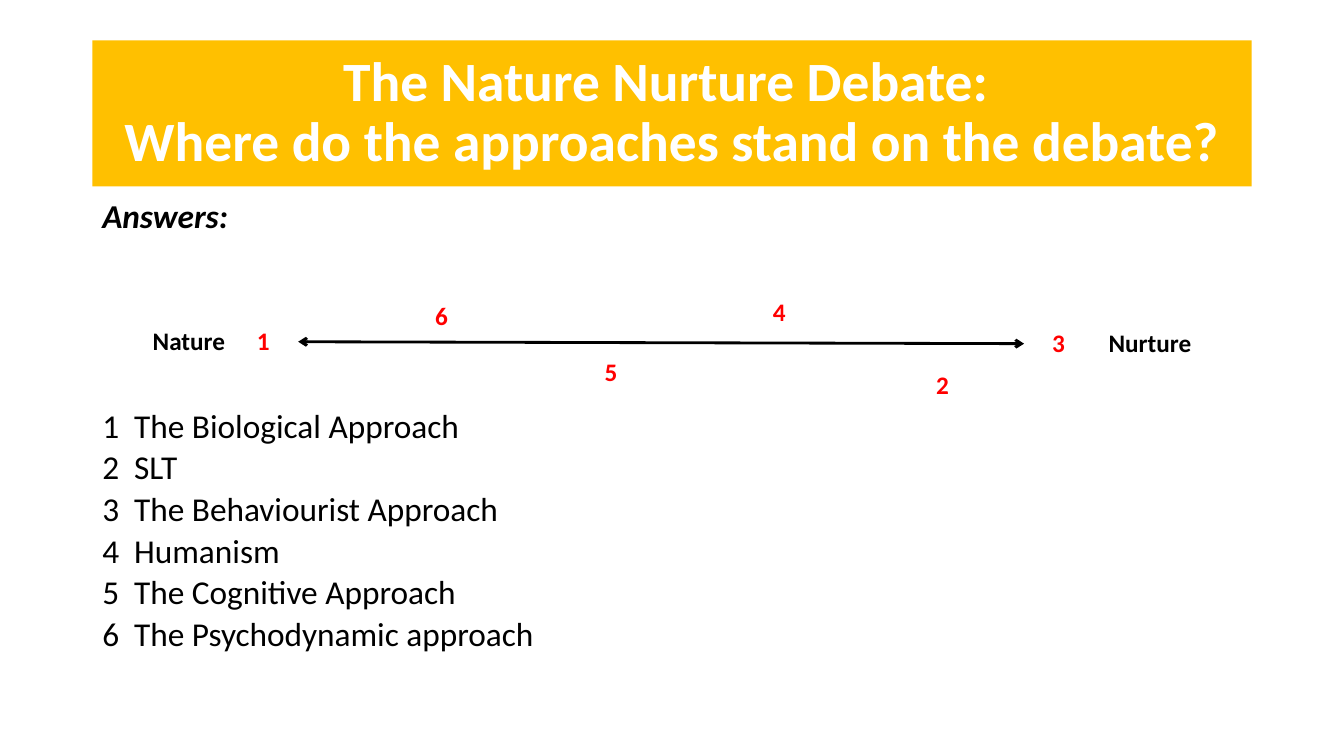
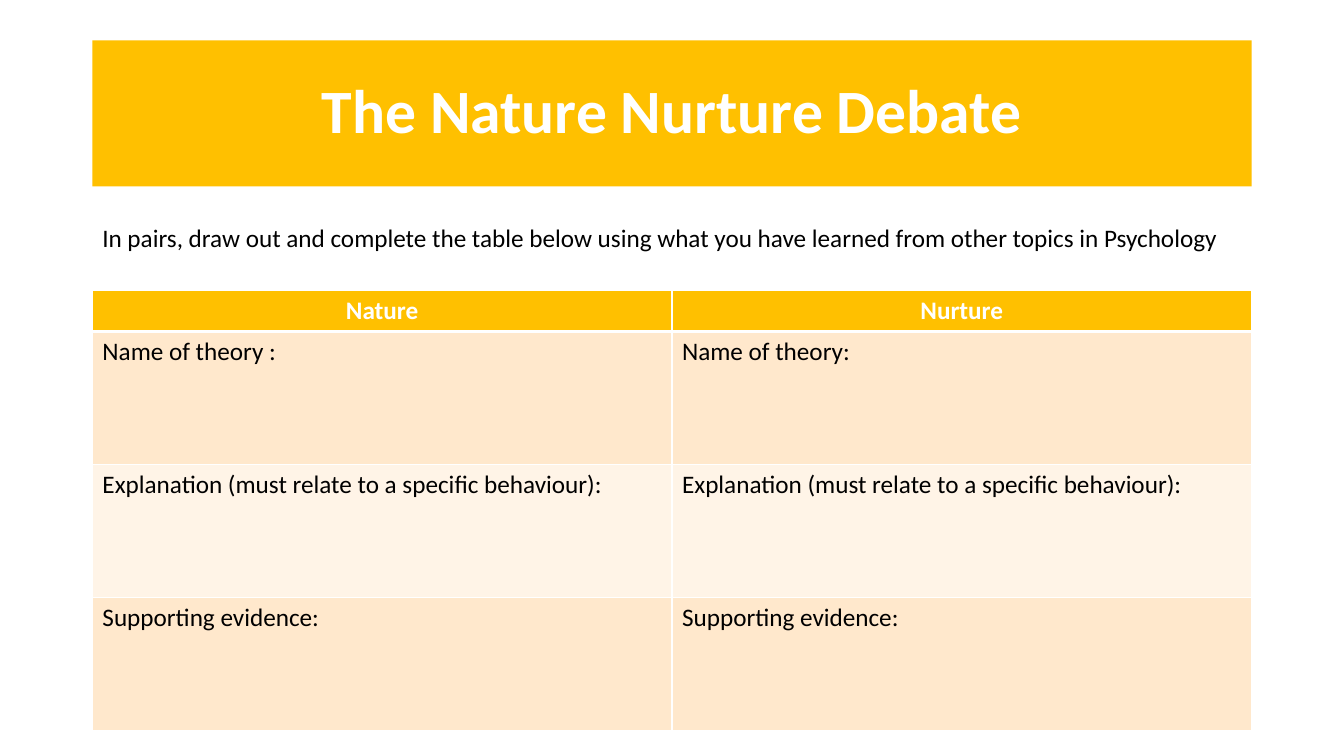
from dataclasses import dataclass

from lxml.etree import SubElement
from pptx import Presentation
from pptx.dml.color import RGBColor
from pptx.enum.shapes import MSO_CONNECTOR
from pptx.enum.text import MSO_ANCHOR, MSO_AUTO_SIZE, PP_ALIGN
from pptx.oxml.ns import qn
from pptx.util import Pt


@dataclass(frozen=True)
class Theme:
    font: str = "Calibri"
    accent: str = "FFC000"
    band_dark: str = "FFE8CC"
    band_light: str = "FFF4E7"
    ink: str = "000000"
    paper: str = "FFFFFF"
    marker: str = "FF0000"
    title_size: float = 44
    long_title_size: float = 39.6
    answer_size: float = 23.8
    body_size: float = 18


@dataclass(frozen=True)
class Box:
    left: float
    top: float
    width: float
    height: float

    def place(self):
        return Pt(self.left), Pt(self.top), Pt(self.width), Pt(self.height)

    def inner(self, left, top, width, height):
        return Box(self.left + left, self.top + top, width, height)


THEME = Theme()
TITLE_BAND = Box(66, 28.8, 828, 104.4)
ANSWERS = Box(66, 144, 828, 342.7)
SCALE = Box(102, 208, 758, 82)
INSTRUCTION = Box(66, 155.5, 828, 29)
WORKSHEET = Box(66, 207.5, 828, 314.2)

APPROACHES = [
    "The Biological Approach",
    "SLT",
    "The Behaviourist Approach",
    "Humanism",
    "The Cognitive Approach",
    "The Psychodynamic approach",
]
POLES = [("Nature", 0, 21), ("Nurture", 682.8, 22.4)]
STANDPOINTS = [(74.4, 21), (559.7, 52.6), (642.5, 22.4), (443, 0), (322.8, 43.3), (201.8, 3)]
WORKSHEET_ROWS = [
    ("Nature", "Nurture"),
    ("Name of theory :", "Name of theory:"),
    ("Explanation (must relate to a specific behaviour):",) * 2,
    ("Supporting evidence:",) * 2,
]


def color(value):
    return RGBColor.from_string(value)


def style(paragraph, size, ink=THEME.ink, bold=False, italic=False):
    font = paragraph.font
    font.name, font.size = THEME.font, Pt(size)
    font.bold, font.italic = bold, italic
    font.color.rgb = color(ink)


def add_title(slide, box, wording, size):
    title = slide.shapes.title
    title.left, title.top, title.width, title.height = box.place()
    title.fill.solid()
    title.fill.fore_color.rgb = color(THEME.accent)
    frame = title.text_frame
    frame.text = wording
    frame.auto_size = MSO_AUTO_SIZE.NONE
    frame.vertical_anchor = MSO_ANCHOR.MIDDLE
    heading = frame.paragraphs[0]
    heading.alignment = PP_ALIGN.CENTER
    heading.line_spacing = 0.9
    style(heading, size, THEME.paper, bold=True)


def add_text(slide, box, lines):
    frame = slide.shapes.add_textbox(*box.place()).text_frame
    frame.word_wrap = True
    frame.text = "\n".join(lines)
    return frame.paragraphs


def add_label(slide, box, wording, ink=THEME.ink, bold=False):
    style(add_text(slide, box, [wording])[0], THEME.body_size, ink, bold)


def add_answers(slide, box):
    numbered = [f"{number}  {name}" for number, name in enumerate(APPROACHES, 1)]
    heading, *answers = add_text(slide, box, ["Answers:", *numbered])
    style(heading, THEME.answer_size, bold=True, italic=True)
    for answer in answers:
        style(answer, THEME.answer_size)
    for line in (heading, *answers):
        line.line_spacing = 0.69
        line.space_before = Pt(10)
    answers[0].space_before = Pt(130)


def add_scale(slide, box):
    axis = slide.shapes.add_connector(
        MSO_CONNECTOR.STRAIGHT,
        Pt(box.left + 111), Pt(box.top + 36.1),
        Pt(box.left + 629.5), Pt(box.top + 37.5),
    )
    axis.line.color.rgb = color(THEME.ink)
    axis.line.width = Pt(2)
    outline = axis.line._get_or_add_ln()
    for end in ("a:headEnd", "a:tailEnd"):
        SubElement(outline, qn(end), type="arrow")
    SubElement(axis._element.spPr, qn("a:effectLst"))
    for pole, left, top in POLES:
        add_label(slide, box.inner(left, top, 76, 29.5), pole, bold=True)
    for number, (left, top) in enumerate(STANDPOINTS, 1):
        add_label(slide, box.inner(left, top, 25, 29.5), str(number), THEME.marker, bold=True)


def add_borders(cell, bottom):
    properties = cell._tc.get_or_add_tcPr()
    edges = [("a:lnL", 1), ("a:lnR", 1), ("a:lnT", 1), ("a:lnB", bottom)]
    for position, (edge, width) in enumerate(edges):
        border = properties.makeelement(qn(edge), {"w": str(Pt(width))})
        fill = SubElement(border, qn("a:solidFill"))
        SubElement(fill, qn("a:srgbClr"), val=THEME.paper)
        properties.insert(position, border)


def add_worksheet(slide, box):
    header_height = 29.2
    row_height = (box.height - header_height) / (len(WORKSHEET_ROWS) - 1)
    worksheet = slide.shapes.add_table(len(WORKSHEET_ROWS), 2, *box.place()).table
    for row_index, wordings in enumerate(WORKSHEET_ROWS):
        header = row_index == 0
        band = THEME.band_dark if row_index % 2 else THEME.band_light
        worksheet.rows[row_index].height = Pt(header_height if header else row_height)
        for column, wording in enumerate(wordings):
            cell = worksheet.cell(row_index, column)
            cell.text = wording
            cell.fill.solid()
            cell.fill.fore_color.rgb = color(THEME.accent if header else band)
            entry = cell.text_frame.paragraphs[0]
            entry.alignment = PP_ALIGN.CENTER if header else PP_ALIGN.LEFT
            style(entry, THEME.body_size, THEME.paper if header else THEME.ink, bold=header)
            add_borders(cell, bottom=3 if row_index == 0 else 1)


def build_answers_slide(slide):
    add_title(
        slide, TITLE_BAND,
        "The Nature Nurture Debate: \vWhere do the approaches stand on the debate?",
        THEME.long_title_size,
    )
    add_answers(slide, ANSWERS)
    add_scale(slide, SCALE)


def build_worksheet_slide(slide):
    add_title(slide, TITLE_BAND, "The Nature Nurture Debate", THEME.title_size)
    add_worksheet(slide, WORKSHEET)
    add_label(
        slide, INSTRUCTION,
        "In pairs, draw out and complete the table below using what you have "
        "learned from other topics in Psychology",
    )


def main():
    deck = Presentation()
    deck.slide_width, deck.slide_height = Pt(960), Pt(540)
    title_only = deck.slide_layouts[5]
    for build in (build_answers_slide, build_worksheet_slide):
        build(deck.slides.add_slide(title_only))
    deck.save("out.pptx")


if __name__ == "__main__":
    main()
